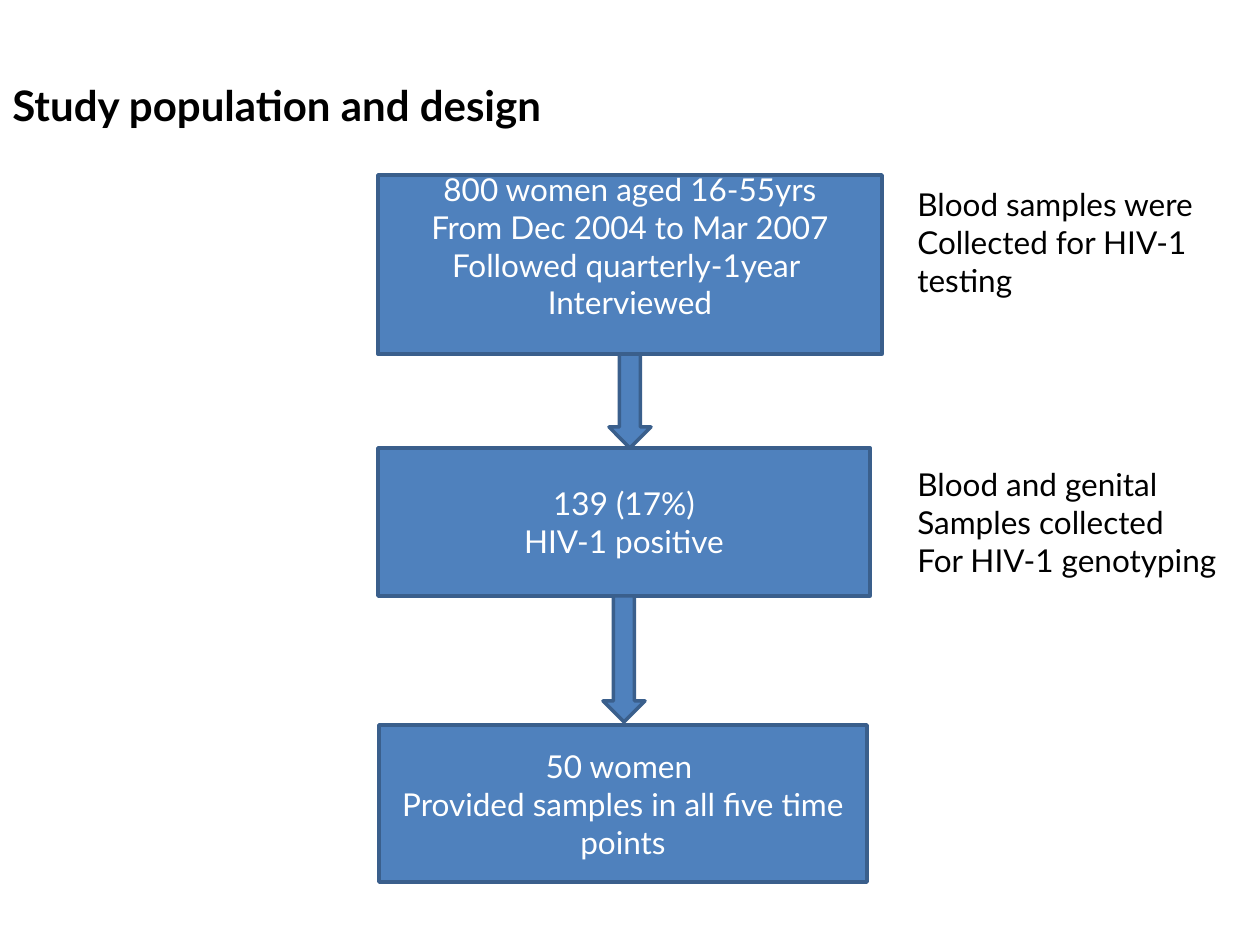
from pptx import Presentation
from pptx import util as u
from pptx.dml.color import RGBColor
from pptx.enum import shapes, text

PX = 914400 // 126
BLACK = RGBColor(0, 0, 0)
WHITE = RGBColor(255, 255, 255)
BLUE = RGBColor(0x4F, 0x81, 0xBD)
EDGE = RGBColor(0x3A, 0x5F, 0x8C)
FONT = "Lato"
INSET = 6

TITLE = ("Study population and design", (0, 73, 819, 63))
NOTES = [
    ("Blood samples were\nCollected for HIV-1 testing", (905, 179, 338, 127)),
    ("Blood and genital\nSamples collected\nFor HIV-1 genotyping", (905, 459, 347, 127)),
]
# text, box, bottom inset
STEPS = [
    ("800 women aged 16-55yrs\nFrom Dec 2004 to Mar 2007\n"
     "Followed quarterly-1year \nInterviewed", (378, 175, 504, 179), 44),
    ("139 (17%)\nHIV-1 positive", (378, 448, 492, 148), INSET),
    ("50 women \nProvided samples in all five time points",
     (379, 725, 488, 157), INSET),
]
ARROW = 42
GAPS = [94, 126]


def emu(box):
    """Turn px lengths into EMU."""
    return [u.Emu(v * PX) for v in box]


def write(shape, words, size=18, color=BLACK, bold=False,
          align=text.PP_ALIGN.LEFT, anchor=text.MSO_ANCHOR.TOP, low=INSET):
    """Fill a shape with one paragraph per line."""
    frame = shape.text_frame
    frame.word_wrap = True
    frame.vertical_anchor = anchor
    frame.margin_bottom = u.Emu(low * PX)
    frame.text = words
    for para in frame.paragraphs:
        para.alignment = align
        font = para.runs[0].font
        font.name, font.size, font.bold = FONT, u.Pt(size), bold
        font.color.rgb = color


def draw(slide, kind, box):
    """Add a blue preset shape."""
    shape = slide.shapes.add_shape(kind, *emu(box))
    shape.shadow.inherit = False
    shape.fill.solid()
    shape.fill.fore_color.rgb = BLUE
    shape.line.color.rgb = EDGE
    shape.line.width = u.Pt(2)
    return shape


def main():
    """Build the study flow slide."""
    deck = Presentation()
    deck.slide_width, deck.slide_height = u.Inches(10), u.Inches(7.5)
    slide = deck.slides.add_slide(deck.slide_layouts[6])

    for words, box in NOTES:
        write(slide.shapes.add_textbox(*emu(box)), words)
    words, box = TITLE
    write(slide.shapes.add_textbox(*emu(box)), words, size=24, bold=True)

    kind = shapes.MSO_SHAPE
    for words, box, low in STEPS:
        write(draw(slide, kind.FLOWCHART_PROCESS, box), words, color=WHITE,
              align=text.PP_ALIGN.CENTER, anchor=text.MSO_ANCHOR.MIDDLE, low=low)
    for (_, (x, y, w, h), _), gap in zip(STEPS, GAPS):
        draw(slide, kind.DOWN_ARROW, (x + (w - ARROW) // 2, y + h, ARROW, gap))

    deck.save("out.pptx")


if __name__ == "__main__":
    main()
